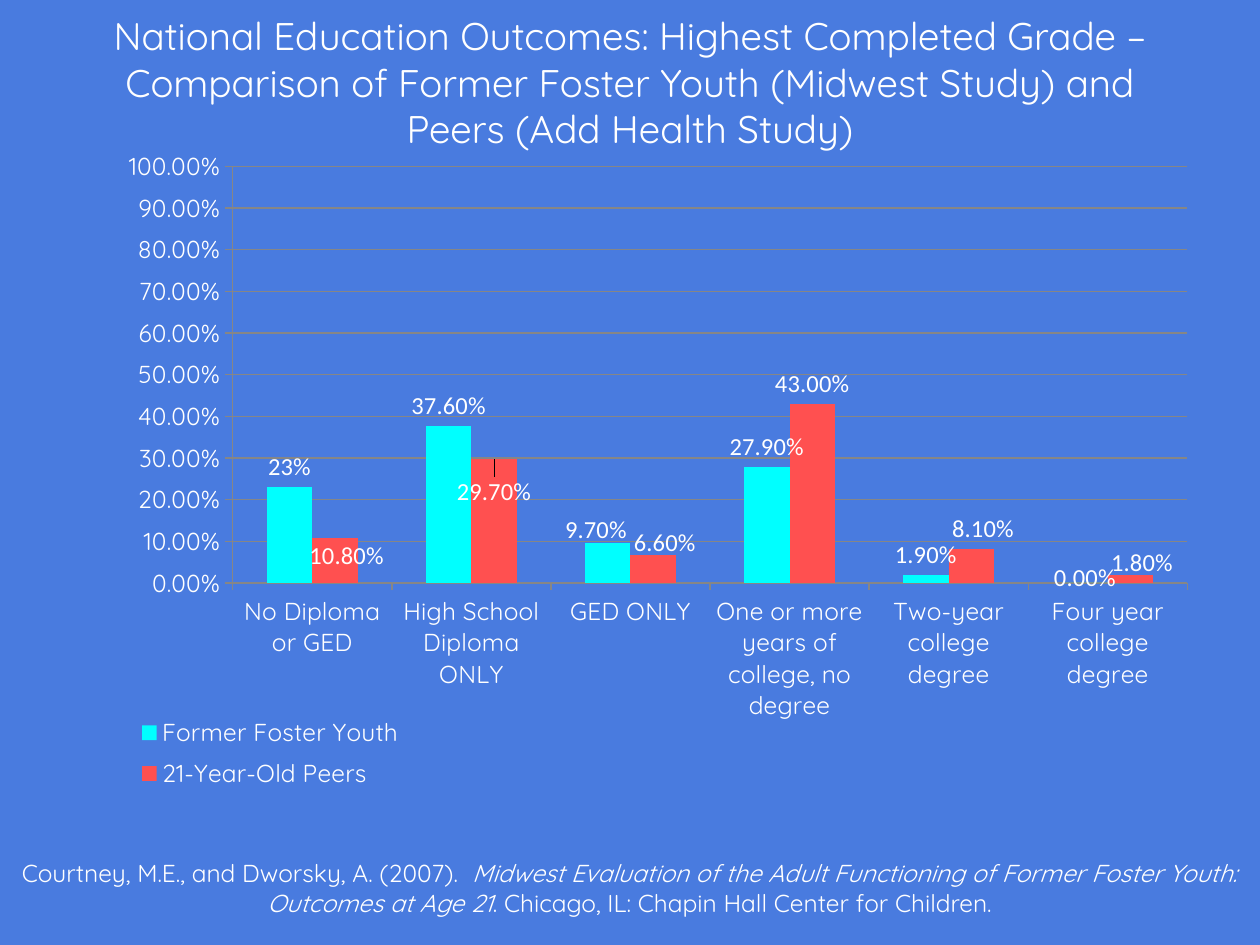
from dataclasses import dataclass

from lxml.etree import SubElement
from pptx import Presentation
from pptx.chart.data import CategoryChartData as Data
from pptx.dml.color import RGBColor as RGB
from pptx.enum.chart import XL_CHART_TYPE as Kind
from pptx.enum.chart import XL_LABEL_POSITION as Spot
from pptx.enum.chart import XL_LEGEND_POSITION as Side
from pptx.enum.chart import XL_TICK_MARK as Tick
from pptx.enum.text import MSO_ANCHOR as Anchor
from pptx.enum.text import PP_ALIGN as Align
from pptx.oxml.ns import qn
from pptx.util import Inches, Pt


@dataclass(frozen=True)
class Theme:
    back: RGB = RGB(0x49, 0x7B, 0xDF)
    ink: RGB = RGB(0xFF, 0xFF, 0xFF)
    grid: RGB = RGB(0x86, 0x86, 0x86)
    youth: RGB = RGB(0x00, 0xFF, 0xFF)
    peers: RGB = RGB(0xFF, 0x50, 0x50)
    font: str = "Quicksand"
    digits: str = "Calibri"
    title: int = 22
    body: int = 14


THEME = Theme()
WIDE, HIGH = Inches(10), Inches(7.5)
PERCENT = "0.00%"

CATS = ["No Diploma or GED", "High School Diploma ONLY", "GED ONLY",
        "One or more years of college, no degree",
        "Two-year college degree", "Four year college degree"]
# Name, colour, values, label shifts by point (shares of the chart)
SERIES = [
    ("Former Foster Youth", THEME.youth,
     [0.23, 0.376, 0.097, 0.279, 0.019, 0],
     {2: (-0.01, 0.01), 5: (0, 0.02)}),
    ("21-Year-Old Peers", THEME.peers,
     [0.108, 0.297, 0.066, 0.43, 0.081, 0.018],
     {0: (0.01, 0.05), 1: (0, 0.07), 2: (0.01, 0.01),
      4: (0.01, 0), 5: (0.01, 0.01)}),
]


def share(x, y, w, h):
    """Turn shares of the slide into lengths."""
    return [int(n) for n in (x * WIDE, y * HIGH, w * WIDE, h * HIGH)]


def style(font, size=THEME.body, name=THEME.font, slant=False):
    font.size, font.name = Pt(size), name
    font.bold, font.italic = False, slant
    font.color.rgb = THEME.ink


def add_text(slide, box, runs, size, anchor):
    """Centred text; runs are pairs of wording and slant."""
    frame = slide.shapes.add_textbox(*share(*box)).text_frame
    frame.word_wrap = True
    frame.vertical_anchor = anchor
    para = frame.paragraphs[0]
    para.alignment = Align.CENTER
    for text, slant in runs:
        run = para.add_run()
        run.text = text
        style(run.font, size, slant=slant)


def set_layout(host, after, **parts):
    """Give a chart part a manual layout, placed after a sibling."""
    for old in host.findall(qn("c:layout")):
        host.remove(old)
    layout = SubElement(host, qn("c:layout"))
    manual = SubElement(layout, qn("c:manualLayout"))
    for tag, val in parts.items():
        SubElement(manual, qn("c:" + tag)).set("val", str(val))
    if after is None:
        host.insert(0, layout)
    else:
        after.addnext(layout)


def set_axis(axis):
    style(axis.tick_labels.font)
    axis.major_tick_mark = Tick.OUTSIDE
    axis.format.line.color.rgb = THEME.grid
    axis.format.line.width = Pt(0.75)


def set_series(series, color, shifts):
    fill = series.format.fill
    fill.solid()
    fill.fore_color.rgb = color
    series.invert_if_negative = False
    labels = series.data_labels
    labels.show_value = True
    labels.number_format, labels.number_format_is_linked = PERCENT, False
    labels.position = Spot.OUTSIDE_END
    style(labels.font, name=THEME.digits)
    # Labels moved off their usual place
    for idx, (x, y) in shifts.items():
        label = series.points[idx].data_label
        label.position = Spot.OUTSIDE_END
        style(label.font, name=THEME.digits)
        for node in labels._element.findall(qn("c:dLbl")):
            mark = node.find(qn("c:idx"))
            if mark.get("val") == str(idx):
                set_layout(node, mark, x=x, y=y)


def add_columns(slide, box):
    data = Data(number_format=PERCENT)
    data.categories = CATS
    for name, _, vals, _ in SERIES:
        data.add_series(name, vals)
    chart = slide.shapes.add_chart(
        Kind.COLUMN_CLUSTERED, *share(*box), data).chart
    chart.has_title = False
    style(chart.font)

    # Plot and series
    plot = chart.plots[0]
    plot.gap_width, plot.overlap, plot.vary_by_categories = 150, 0, False
    for series, (_, color, _, shifts) in zip(plot.series, SERIES):
        set_series(series, color, shifts)
    # One label is worded without decimals
    run = plot.series[0].points[0].data_label.text_frame.paragraphs[0].add_run()
    run.text = "23%"
    style(run.font, name=THEME.digits)
    plot.series[0].points[0].data_label.position = Spot.OUTSIDE_END
    area = chart._chartSpace.chart.plotArea
    set_layout(area, None, layoutTarget="inner", xMode="edge", yMode="edge",
               x=0.153, y=0.124, w=0.812, h=0.551)

    # Axes
    set_axis(chart.category_axis)
    axis = chart.value_axis
    set_axis(axis)
    axis.minimum_scale, axis.maximum_scale, axis.major_unit = 0, 1, 0.1
    axis.tick_labels.number_format = PERCENT
    axis.tick_labels.number_format_is_linked = False
    axis.has_major_gridlines = True
    axis.major_gridlines.format.line.color.rgb = THEME.grid
    axis.major_gridlines.format.line.width = Pt(0.75)

    # Legend
    chart.has_legend = True
    legend = chart.legend
    legend.position, legend.include_in_layout = Side.RIGHT, False
    style(legend.font)
    node = legend._element
    set_layout(node, node.find(qn("c:legendPos")), xMode="edge",
               yMode="edge", x=0.06, y=0.84, w=0.25, h=0.12)


def main():
    deck = Presentation()
    deck.slide_width, deck.slide_height = WIDE, HIGH
    slide = deck.slides.add_slide(deck.slide_layouts[6])
    fill = slide.background.fill
    fill.solid()
    fill.fore_color.rgb = THEME.back

    # Title
    add_text(slide, (0.05, 0.04, 0.9, 0.093), [
        ("National Education Outcomes: Highest Completed Grade – Comparison "
         "of Former Foster Youth (Midwest Study) and Peers "
         "(Add Health Study)", False)], THEME.title, Anchor.MIDDLE)

    # Chart
    add_columns(slide, (0.042, 0.077, 0.933, 0.8))

    # Citation
    add_text(slide, (0, 0.901, 1, 0.076), [
        ("Courtney, M.E., and Dworsky, A. (2007).  ", False),
        ("Midwest Evaluation of the Adult Functioning of Former Foster "
         "Youth: Outcomes at Age 21", True),
        (". Chicago, IL: Chapin Hall Center for Children.", False)],
        THEME.body, Anchor.BOTTOM)

    deck.save("out.pptx")


if __name__ == "__main__":
    main()
